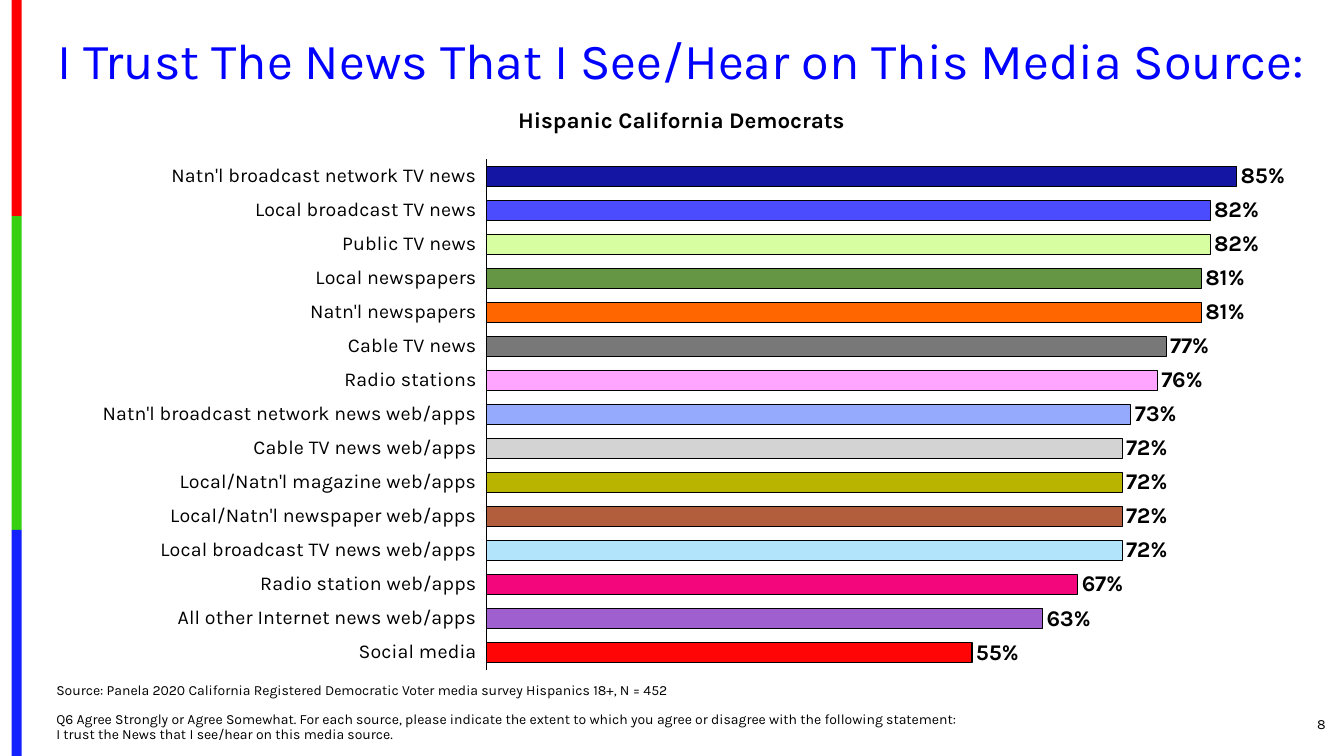
from lxml import etree
from pptx import Presentation
from pptx.chart.data import CategoryChartData
from pptx.dml.color import RGBColor
from pptx.enum.chart import XL_CHART_TYPE, XL_LABEL_POSITION, XL_TICK_LABEL_POSITION, XL_TICK_MARK
from pptx.enum.shapes import MSO_SHAPE
from pptx.enum.text import MSO_ANCHOR, PP_ALIGN
from pptx.oxml.ns import qn
from pptx.util import Pt

BAR = XL_CHART_TYPE.BAR_CLUSTERED
OUTSIDE = XL_LABEL_POSITION.OUTSIDE_END
LABELS_LOW = XL_TICK_LABEL_POSITION.LOW
NO_TICK = XL_TICK_MARK.NONE
RECT = MSO_SHAPE.RECTANGLE
TOP, MIDDLE, BOTTOM = MSO_ANCHOR.TOP, MSO_ANCHOR.MIDDLE, MSO_ANCHOR.BOTTOM
LEFT, CENTER, RIGHT = PP_ALIGN.LEFT, PP_ALIGN.CENTER, PP_ALIGN.RIGHT

THEME = {
    "font": "Karla", "ink": "000000", "title": "0000FF",
    "title_size": 36, "subtitle_size": 16, "category_size": 14,
    "value_size": 16, "note_size": 10, "line": 0.75,
}

# Content: trust per media source, top bar first
TRUST = [
    ("Natn'l broadcast network TV news", 0.85, "1515A3"),
    ("Local broadcast TV news", 0.82, "4C4CFF"),
    ("Public TV news", 0.82, "D7FFA1"),
    ("Local newspapers", 0.81, "659643"),
    ("Natn'l newspapers", 0.81, "FF6600"),
    ("Cable TV news", 0.77, "787878"),
    ("Radio stations", 0.76, "FFA4FF"),
    ("Natn'l broadcast network news web/apps", 0.73, "95A9FD"),
    ("Cable TV news web/apps", 0.72, "D3D3D3"),
    ("Local/Natn'l magazine web/apps", 0.72, "B8B400"),
    ("Local/Natn'l newspaper web/apps", 0.72, "B25E3C"),
    ("Local broadcast TV news web/apps", 0.72, "B2E5FC"),
    ("Radio station web/apps", 0.67, "F3057C"),
    ("All other Internet news web/apps", 0.63, "9F5FCF"),
    ("Social media", 0.55, "FF0505"),
]
STRIPES = [("FE0000", 154.5), ("36CF12", 224), ("1322FE", 161.5)]
PLOT = {"x": 0.352, "y": 0.028, "w": 0.635, "h": 0.943}
TEXTS = [
    {"lines": ["I Trust The News That I See/Hear on This Media Source:"],
     "at": (19.44, 22.3, 934.5, 60.5), "size": "title_size", "color": "title",
     "align": CENTER, "anchor": TOP, "spacing": 0.9},
    {"lines": ["Hispanic California Democrats"],
     "at": (141.84, 72, 689.8, 26.6), "size": "subtitle_size", "bold": True,
     "align": CENTER, "anchor": TOP},
    {"lines": ["Source: Panela 2020 California Registered Democratic Voter media survey "
               "Hispanics 18+, N = 452",
               "Q6 Agree Strongly or Agree Somewhat. For each source, please indicate the "
               "extent to which you agree or disagree with the following statement: \v"
               "I trust the News that I see/hear on this media source."],
     "at": (33.12, 483.8, 680.4, 50.4), "size": "note_size",
     "align": LEFT, "anchor": BOTTOM, "spacing": 0.9},
    {"lines": ["8"], "at": (876.2, 502.6, 77.8, 28.8), "size": "note_size",
     "align": RIGHT, "anchor": MIDDLE},
]


def rgb(code):
    return RGBColor.from_string(code)


def set_font(font, size, color="ink", bold=False):
    values = {"name": THEME["font"], "size": Pt(THEME[size]), "bold": bold}
    for name, value in values.items():
        setattr(font, name, value)
    font.color.rgb = rgb(THEME[color])


def set_line(line):
    line.color.rgb = rgb(THEME["ink"])
    line.width = Pt(THEME["line"])


def add_stripes(page):
    top = 0
    for color, height in STRIPES:
        stripe = page.shapes.add_shape(RECT, Pt(8.28), Pt(top), Pt(7.2), Pt(height))
        stripe.shadow.inherit = False
        stripe.fill.solid()
        stripe.fill.fore_color.rgb = rgb(color)
        stripe.line.fill.background()
        top += height


def add_text(page, item):
    box = page.shapes.add_textbox(*map(Pt, item["at"]))
    frame = box.text_frame
    frame.word_wrap = True
    frame.vertical_anchor = item["anchor"]
    for index, line in enumerate(item["lines"]):
        para = frame.add_paragraph() if index else frame.paragraphs[0]
        para.text = line
        para.alignment = item["align"]
        para.line_spacing = item.get("spacing", 1.0)
        if index:
            para.space_before = Pt(10)
        for span in para.runs:
            set_font(span.font, item["size"], item.get("color", "ink"), item.get("bold", False))


def place_plot(chart):
    area = chart.plots[0]._element.getparent()
    for old in area.findall(qn("c:layout")):
        area.remove(old)
    layout = etree.Element(qn("c:layout"))
    manual = etree.SubElement(layout, qn("c:manualLayout"))
    settings = {"layoutTarget": "inner", "xMode": "edge", "yMode": "edge", **PLOT}
    for name, value in settings.items():
        etree.SubElement(manual, qn(f"c:{name}")).set("val", str(value))
    area.insert(0, layout)


def add_trust_chart(page):
    bars = TRUST[::-1]  # a bar chart stacks from the bottom up
    data = CategoryChartData(number_format="0%")
    data.categories = [name for name, _, _ in bars]
    data.add_series("Trust", [share for _, share, _ in bars])
    chart = page.shapes.add_chart(BAR, Pt(33.12), Pt(103), Pt(893.5), Pt(386.6), data).chart
    chart.has_legend = chart.has_title = False
    set_font(chart.font, "note_size")
    place_plot(chart)

    # Axes
    names, scale = chart.category_axis, chart.value_axis
    names.major_tick_mark = names.minor_tick_mark = NO_TICK
    names.tick_label_position = LABELS_LOW
    set_font(names.tick_labels.font, "category_size")
    set_line(names.format.line)
    scale.minimum_scale, scale.maximum_scale = 0, 0.9
    scale.has_major_gridlines = False
    scale.visible = False

    # Bars and values
    plot = chart.plots[0]
    plot.gap_width = 72
    plot.vary_by_categories = False
    for index, (_, _, color) in enumerate(bars):
        style = plot.series[0].points[index].format
        style.fill.solid()
        style.fill.fore_color.rgb = rgb(color)
        set_line(style.line)
    plot.has_data_labels = True
    labels = plot.data_labels
    values = {"show_value": True, "number_format": "0%",
              "number_format_is_linked": False, "position": OUTSIDE}
    for name, value in values.items():
        setattr(labels, name, value)
    set_font(labels.font, "value_size", bold=True)


def main():
    deck = Presentation()
    deck.slide_width, deck.slide_height = Pt(960), Pt(540)
    page = deck.slides.add_slide(deck.slide_layouts[6])
    add_stripes(page)
    add_trust_chart(page)
    for item in TEXTS:
        add_text(page, item)
    deck.save("out.pptx")


if __name__ == "__main__":
    main()
